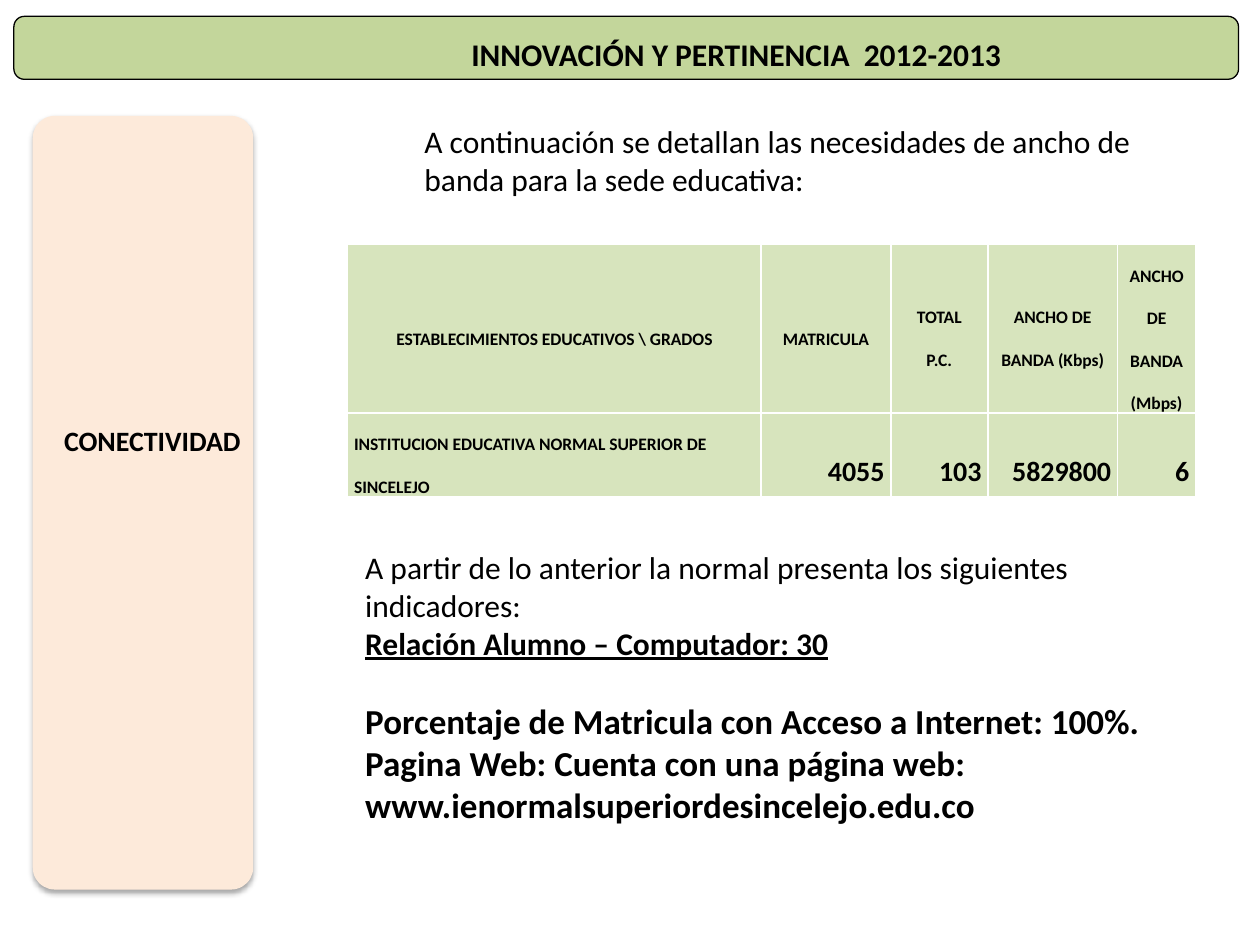
from lxml import etree
from pptx import Presentation
from pptx.dml.color import RGBColor
from pptx.enum.shapes import MSO_SHAPE
from pptx.enum.text import MSO_ANCHOR, MSO_AUTO_SIZE, PP_ALIGN
from pptx.oxml.ns import qn
from pptx.util import Inches, Pt

ROUNDED = MSO_SHAPE.ROUNDED_RECTANGLE
LEFT, CENTER, RIGHT = PP_ALIGN.LEFT, PP_ALIGN.CENTER, PP_ALIGN.RIGHT
TOP, MIDDLE, BOTTOM = MSO_ANCHOR.TOP, MSO_ANCHOR.MIDDLE, MSO_ANCHOR.BOTTOM
FIT_SHAPE, NO_FIT = MSO_AUTO_SIZE.SHAPE_TO_FIT_TEXT, MSO_AUTO_SIZE.NONE

FONT = "Calibri"
BLACK, WHITE = "000000", "FFFFFF"
BAR_GREEN, CELL_GREEN, PEACH = "C3D69B", "D7E4BD", "FDEADA"

COLUMN_WIDTHS = [3.28, 1.03, 0.77, 1.03, 0.62]
ROW_HEIGHTS = [1.33, 0.67]
HEADERS = [
    "ESTABLECIMIENTOS EDUCATIVOS \\ GRADOS",
    "MATRICULA",
    "TOTAL\nP.C.",
    "ANCHO DE BANDA (Kbps)",
    "ANCHO DE BANDA (Mbps)",
]
VALUES = ["INSTITUCION EDUCATIVA NORMAL SUPERIOR DE SINCELEJO", "4055", "103", "5829800", "6"]
INTRODUCTION = "A continuación se detallan las necesidades de ancho de banda para la sede educativa:"
INDICATORS = [
    "A partir de lo anterior la normal presenta los siguientes indicadores:",
    "Relación Alumno – Computador: 30",
    "Porcentaje de Matricula con Acceso a Internet: 100%.",
    "Pagina Web: Cuenta con una página web: www.ienormalsuperiordesincelejo.edu.co",
]


def color(value):
    """Turn a hex string into a colour."""
    return RGBColor.from_string(value)


def place(shape, left, top, width, height):
    """Set the position and size of a shape in inches."""
    shape.left, shape.top = Inches(left), Inches(top)
    shape.width, shape.height = Inches(width), Inches(height)


def format_paragraph(paragraph, size, bold=False, underline=False, align=LEFT):
    """Format a paragraph and its runs."""
    paragraph.alignment = align
    for run in paragraph.runs:
        font = run.font
        font.name, font.size = FONT, Pt(size)
        font.bold, font.underline = bold, underline
        font.color.rgb = color(BLACK)


def add_panel(slide, box, radius, fill):
    """Add a rounded panel without line or shadow."""
    panel = slide.shapes.add_shape(ROUNDED, *map(Inches, box))
    panel.adjustments[0] = radius
    panel.fill.solid()
    panel.fill.fore_color.rgb = color(fill)
    panel.line.fill.background()
    panel.shadow.inherit = False
    return panel


def add_soft_shadow(shape):
    """Give a shape a soft shadow that falls downwards."""
    effects = shape.element.spPr.find(qn("a:effectLst"))
    shadow = etree.SubElement(
        effects, qn("a:outerShdw"), blurRad=str(Pt(3.1)), dist=str(Pt(1.8)),
        dir="5400000", rotWithShape="0")
    shade = etree.SubElement(shadow, qn("a:srgbClr"), val=BLACK)
    etree.SubElement(shade, qn("a:alpha"), val="35000")


def add_text(slide, box, lines, anchor=TOP, fit=FIT_SHAPE):
    """Add a wrapping text box and return its paragraphs."""
    text_frame = slide.shapes.add_textbox(*map(Inches, box)).text_frame
    text_frame.word_wrap = True
    text_frame.auto_size = fit
    text_frame.vertical_anchor = anchor
    text_frame.text = "\n".join(lines)
    return text_frame.paragraphs


def add_title_bar(slide):
    """Add the green bar and set the title on top of it."""
    bar = add_panel(slide, (0.11, 0.13, 9.72, 0.5), 0.167, BAR_GREEN)
    bar.line.color.rgb = color(BLACK)
    bar.line.width = Pt(0.75)
    title = slide.shapes.title
    title.element.addprevious(bar.element)
    place(title, 3.64, 0.23, 4.45, 0.4)
    title.text_frame.text = "INNOVACIÓN Y PERTINENCIA  2012-2013"
    title.text_frame.word_wrap = False
    title.text_frame.auto_size = FIT_SHAPE
    title.text_frame.vertical_anchor = TOP
    format_paragraph(title.text_frame.paragraphs[0], 18, bold=True)


def add_side_panel(slide):
    """Add the peach panel with its label."""
    add_soft_shadow(add_panel(slide, (0.26, 0.92, 1.75, 6.14), 0.1, PEACH))
    label = add_text(slide, (0.26, 3.04, 1.9, 0.64), ["CONECTIVIDAD"], BOTTOM, NO_FIT)
    format_paragraph(label[0], 16, bold=True, align=CENTER)


def set_borders(cell):
    """Draw thin white borders around a cell."""
    properties = cell._tc.get_or_add_tcPr()
    for side in ("lnL", "lnR", "lnT", "lnB"):
        line = etree.SubElement(properties, qn(f"a:{side}"), w=str(Pt(1)))
        fill = etree.SubElement(line, qn("a:solidFill"))
        etree.SubElement(fill, qn("a:srgbClr"), val=WHITE)


def fill_cell(cell, text, size, align):
    """Write and format one table cell."""
    set_borders(cell)
    cell.fill.solid()
    cell.fill.fore_color.rgb = color(CELL_GREEN)
    cell.vertical_anchor = MIDDLE
    cell.margin_left = cell.margin_right = Inches(0.05)
    cell.margin_top = cell.margin_bottom = 0
    cell.text_frame.text = text
    for paragraph in cell.text_frame.paragraphs:
        paragraph.line_spacing = 2.0
        format_paragraph(paragraph, size, bold=True, align=align)


def add_bandwidth_table(slide):
    """Add the table of bandwidth needs."""
    box = (2.76, 1.94, sum(COLUMN_WIDTHS), sum(ROW_HEIGHTS))
    table = slide.shapes.add_table(2, len(HEADERS), *map(Inches, box)).table
    for row, height in zip(table.rows, ROW_HEIGHTS):
        row.height = Inches(height)
    for index, width in enumerate(COLUMN_WIDTHS):
        table.columns[index].width = Inches(width)
        fill_cell(table.cell(0, index), HEADERS[index], 10, CENTER)
        size, align = (16, RIGHT) if index else (10, LEFT)
        fill_cell(table.cell(1, index), VALUES[index], size, align)


def add_indicators(slide):
    """Add the list of indicators below the table."""
    paragraphs = add_text(slide, (2.8, 4.3, 6.85, 2.32), INDICATORS)
    introduction, ratio, access, website = paragraphs
    format_paragraph(introduction, 18)
    format_paragraph(ratio, 18, bold=True, underline=True)
    format_paragraph(access, 20, bold=True)
    format_paragraph(website, 20, bold=True)
    access.space_before = Pt(22)


def main():
    """Build the slide and save it."""
    presentation = Presentation()
    presentation.slide_width, presentation.slide_height = Inches(10), Inches(7.5)
    slide = presentation.slides.add_slide(presentation.slide_layouts[5])
    add_title_bar(slide)
    add_side_panel(slide)
    introduction = add_text(slide, (3.27, 0.92, 5.91, 0.71), [INTRODUCTION])
    format_paragraph(introduction[0], 18)
    add_bandwidth_table(slide)
    add_indicators(slide)
    presentation.save("out.pptx")


if __name__ == "__main__":
    main()
